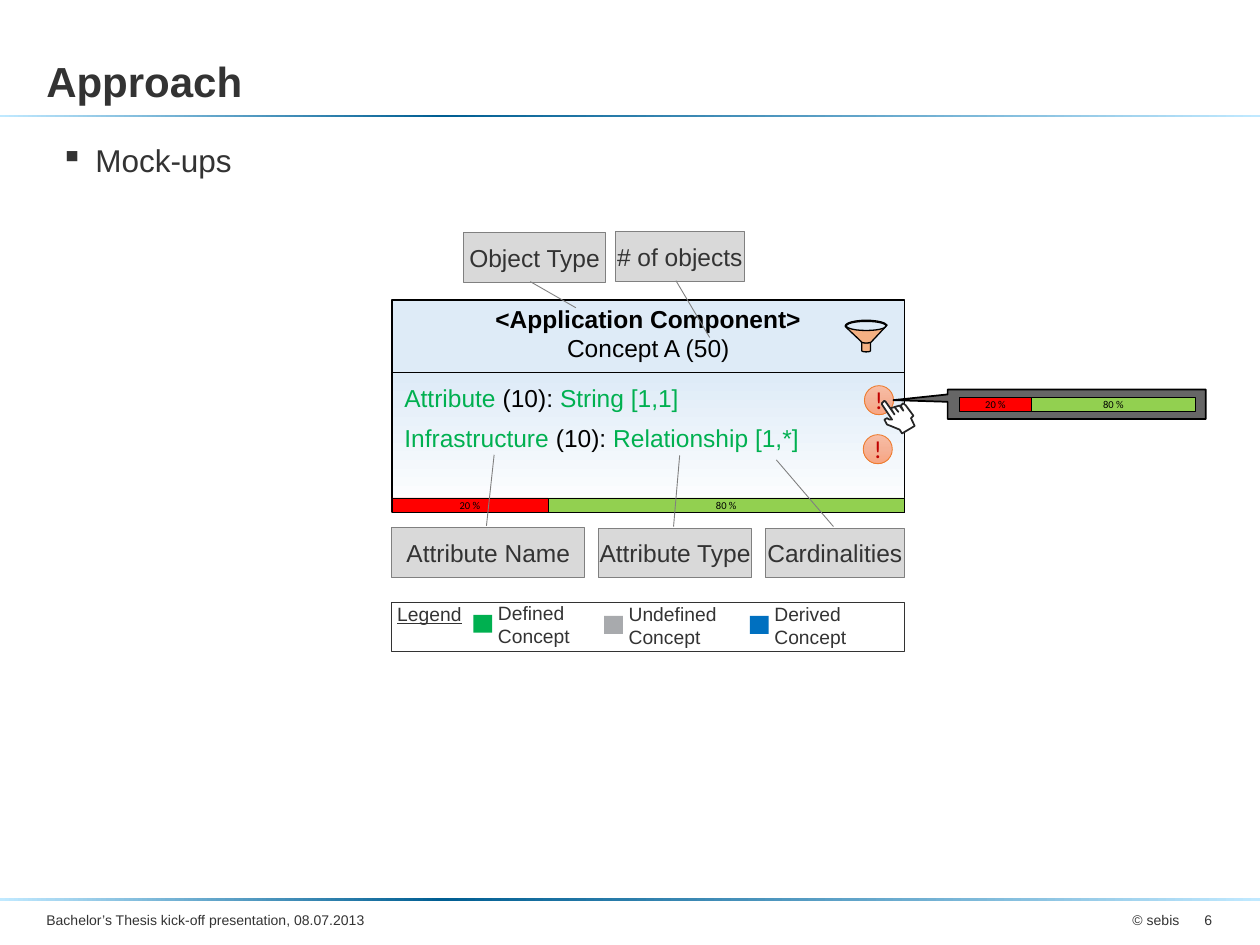
from dataclasses import dataclass

import pptx
import pptx.dml.color
import pptx.enum.shapes
import pptx.enum.text
import pptx.oxml.ns
import pptx.util
from lxml import etree

Pt = pptx.util.Pt
qn = pptx.oxml.ns.qn
RGBColor = pptx.dml.color.RGBColor
SHAPE = pptx.enum.shapes.MSO_SHAPE
ALIGN = pptx.enum.text.PP_ALIGN
ANCHOR = pptx.enum.text.MSO_ANCHOR


@dataclass(frozen=True)
class Theme:
    font: str = "Arial"
    small_font: str = "Calibri"
    title: int = 24
    body: int = 18
    label: int = 14
    legend: int = 11
    footer: int = 8
    percent: int = 6
    text: str = "333333"
    black: str = "000000"
    white: str = "FFFFFF"
    defined: str = "00B050"
    undefined: str = "A8AAAD"
    derived: str = "0070C0"
    label_fill: str = "D9D9D9"
    label_line: str = "808080"
    bad: str = "FF0000"
    good: str = "92D050"
    warning: str = "C00000"
    warning_line: str = "ED7D31"
    funnel: str = "F4B183"
    hand_line: str = "262626"
    rule: tuple = ((0, "C0E9FF"), (35, "005E92"), (100, "C0E9FF"))
    card: tuple = ((0, "DEEBF7"), (35, "DEEBF7"), (100, "FFFFFF"))
    warning_fill: tuple = ((0, "F7BDA5"), (50, "F5B196"), (100, "F8A582"))


THEME = Theme()
CARD_LEFT, CARD_TOP, CARD_WIDTH, CARD_HEIGHT = 224, 171.4, 293, 121
BAR_HEIGHT = 8
RED_SHARE = 0.304
HAND = [
    (509.8, 239.8), (504, 231.1), (504, 230.4), (505.4, 229), (506.2, 229.7),
    (511.2, 236.9), (509, 233.3), (511.2, 232.6), (513.4, 235.4), (511.2, 232.6),
    (514.1, 231.8), (516.2, 234.7), (514.8, 231.8), (516.2, 230.4), (517.7, 231.8),
    (522, 237.6), (520.6, 239), (522.7, 243.4), (515.5, 247.7), (514.1, 245.5),
    (509, 243.4), (506.9, 242.6), (505.4, 239.8), (506.9, 239), (508.3, 239.8),
]


def points(*lengths):
    return [Pt(length) for length in lengths]


def paint_gradient(shape, stops, angle):
    """Fill with any number of (percent, colour) stops; angle is counter-clockwise."""
    shape.fill.gradient()
    shape.fill.gradient_angle = angle
    stop_list = shape._element.spPr.find(qn("a:gradFill")).find(qn("a:gsLst"))
    for old in list(stop_list):
        stop_list.remove(old)
    for percent, color in stops:
        stop = etree.SubElement(stop_list, qn("a:gs"), pos=str(percent * 1000))
        etree.SubElement(stop, qn("a:srgbClr"), val=color)


def style_shape(shape, fill, line=None, width=0.5, angle=270):
    shape.shadow.inherit = False
    if isinstance(fill, tuple):
        paint_gradient(shape, fill, angle)
    else:
        shape.fill.solid()
        shape.fill.fore_color.rgb = RGBColor.from_string(fill)
    if line:
        shape.line.color.rgb = RGBColor.from_string(line)
        shape.line.width = Pt(width)
    else:
        shape.line.fill.background()
    return shape


def add_shape(page, kind, place, fill, line=None, width=0.5, angle=270):
    shape = page.shapes.add_shape(kind, *points(*place))
    return style_shape(shape, fill, line, width, angle)


def write(shape, paragraphs, size, align=ALIGN.LEFT, anchor=ANCHOR.TOP,
          insets=(7.2, 3.6, 7.2, 3.6), font=THEME.font):
    """Each paragraph is a list of (text, colour, font extras) spans."""
    frame = shape.text_frame
    sides = ("margin_left", "margin_top", "margin_right", "margin_bottom")
    frame_format = dict(zip(sides, points(*insets)), word_wrap=True, vertical_anchor=anchor)
    for name, value in frame_format.items():
        setattr(frame, name, value)
    for index, spans in enumerate(paragraphs):
        para = frame.add_paragraph() if index else frame.paragraphs[0]
        para.alignment = align
        for text, color, extras in spans:
            span = para.add_run()
            span.text = text
            span.font.color.rgb = RGBColor.from_string(color)
            for name, value in {"name": font, "size": Pt(size), **extras}.items():
                setattr(span.font, name, value)


def add_text(page, place, paragraphs, size, **layout):
    box = page.shapes.add_textbox(*points(*place))
    write(box, paragraphs, size, **layout)
    return box


def plain(text, color=THEME.text, **extras):
    return [[(text, color, extras)]]


def add_bullet(box):
    properties = box.text_frame.paragraphs[0]._p.get_or_add_pPr()
    properties.set("marL", str(Pt(28)))
    properties.set("indent", str(Pt(-20)))
    etree.SubElement(properties, qn("a:buChar"), char="▪")


def add_frame(page):
    for top in (65.7, 513.2):
        add_shape(page, SHAPE.RECTANGLE, (0, top, 720, 1.4), THEME.rule, angle=0)
    add_text(page, (19.4, 3.6, 612, 57), plain("Approach", bold=True), THEME.title,
             anchor=ANCHOR.BOTTOM, insets=(7.2, 0, 7.2, 0))
    footers = (
        (19.4, 369, "Bachelor’s Thesis kick-off presentation, 08.07.2013", ALIGN.LEFT),
        (554.4, 126.7, "© sebis", ALIGN.RIGHT),
        (680.4, 19.4, "6", ALIGN.RIGHT),
    )
    for left, width, text, align in footers:
        add_text(page, (left, 514, width, 23), plain(text), THEME.footer,
                 align=align, anchor=ANCHOR.MIDDLE)
    add_bullet(add_text(page, (19.4, 77, 680.4, 425.5), plain("Mock-ups"), THEME.body))


def add_bar(page, left, top, width):
    red = width * RED_SHARE
    parts = ((left + red, width - red, THEME.good, "80 %"), (left, red, THEME.bad, "20 %"))
    for part_left, part_width, color, text in parts:
        part = add_shape(page, SHAPE.RECTANGLE, (part_left, top, part_width, BAR_HEIGHT),
                         color, THEME.black, 0.25)
        write(part, plain(text, THEME.black), THEME.percent, ALIGN.CENTER, ANCHOR.MIDDLE,
              (0, 0, 0, 0), THEME.small_font)


def add_warning(page, left, top):
    badge = add_shape(page, SHAPE.OVAL, (left, top, 16.6, 16.6), THEME.warning_fill,
                      THEME.warning_line)
    write(badge, plain("!", THEME.warning), THEME.label, ALIGN.CENTER, ANCHOR.MIDDLE,
          (0, 0, 0, 0), THEME.small_font)


def add_card(page):
    add_shape(page, SHAPE.RECTANGLE, (CARD_LEFT, CARD_TOP, CARD_WIDTH, CARD_HEIGHT),
              THEME.card, THEME.black, 1)
    divider = page.shapes.add_connector(
        pptx.enum.shapes.MSO_CONNECTOR.STRAIGHT,
        *points(CARD_LEFT, 213, CARD_LEFT + CARD_WIDTH, 213))
    divider.line.color.rgb = RGBColor.from_string(THEME.black)
    divider.line.width = Pt(0.5)
    etree.SubElement(divider._element.spPr, qn("a:effectLst"))
    rows = ((215.3, "Attribute ", "String [1,1]"),
            (238.3, "Infrastructure ", "Relationship [1,*]"))
    for top, name, kind in rows:
        spans = [(name, THEME.defined, {}), ("(10): ", THEME.black, {}),
                 (kind, THEME.defined, {})]
        add_text(page, (CARD_LEFT, top, 260, 24.5), [spans], THEME.label)
    heading = (plain("<Application Component>", THEME.black, bold=True)
               + plain("Concept A (50)", THEME.black))
    add_text(page, (CARD_LEFT, 170, CARD_WIDTH, 41), heading, THEME.label, align=ALIGN.CENTER)
    add_warning(page, 494, 220.4)
    add_warning(page, 493.3, 248.4)
    add_shape(page, SHAPE.CAN, (492.5, 194.6, 5, 6.5), THEME.funnel, THEME.black, 0.75)
    add_shape(page, SHAPE.FUNNEL, (483, 183, 24, 13), THEME.funnel, THEME.black, 0.75)
    add_bar(page, CARD_LEFT, 284.6, CARD_WIDTH)


def add_legend(page):
    legend = add_shape(page, SHAPE.RECTANGLE, (CARD_LEFT, 344.2, CARD_WIDTH, 28),
                       THEME.white, THEME.text)
    write(legend, plain("Legend", underline=True), THEME.legend, insets=(3, 0, 3, 0))
    entries = ((270.5, 343.6, THEME.defined, "Defined Concept"),
               (345.2, 344.2, THEME.undefined, "Undefined Concept"),
               (428.5, 344.2, THEME.derived, "Derived Concept"))
    for left, top, color, text in entries:
        add_shape(page, SHAPE.RECTANGLE, (left, top + 7.8, 10.8, 10.2), color)
        add_text(page, (left + 14, top, 70.5, 26.6), plain(text), THEME.legend,
                 insets=(0, 0, 0, 0))


def add_labels(page):
    labels = (
        ("# of objects", 351.5, 132.5, 74, (0.99, 0.47, 2.14, 0.73)),
        ("Cardinalities", 437.3, 302, 79.6, (-0.04, 0.49, -1.39, 0.08)),
        ("Attribute Type", 342, 302, 87.6, (-0.04, 0.49, -1.48, 0.53)),
        ("Attribute Name", CARD_LEFT, 301.6, 110.2, (-0.04, 0.49, -1.48, 0.53)),
        ("Object Type", 264.8, 133, 81.4, (0.99, 0.47, 1.52, 0.79)),
    )
    for text, left, top, width, pointer in labels:
        label = add_shape(page, SHAPE.LINE_CALLOUT_1, (left, top, width, 28.2),
                          THEME.label_fill, THEME.label_line)
        for index, value in enumerate(pointer):
            label.adjustments[index] = value
        write(label, plain(text), THEME.label, ALIGN.CENTER, ANCHOR.MIDDLE, (0, 3.6, 0, 3.6))


def add_tooltip(page):
    tooltip = add_shape(page, SHAPE.RECTANGULAR_CALLOUT, (541.5, 222.6, 147.5, 16.8),
                        THEME.black, THEME.black, 1)
    tooltip.adjustments[0], tooltip.adjustments[1] = -0.71, -0.14
    color = tooltip._element.spPr.find(qn("a:solidFill")).find(qn("a:srgbClr"))
    etree.SubElement(color, qn("a:alpha"), val="60000")
    add_bar(page, 548.4, 227, 134.6)


def add_hand(page):
    start, *rest = [points(*corner) for corner in HAND]
    outline = page.shapes.build_freeform(*start)
    outline.add_line_segments(rest, close=True)
    style_shape(outline.convert_to_shape(), THEME.white, THEME.hand_line, 1)


def main():
    deck = pptx.Presentation()
    deck.slide_width, deck.slide_height = points(720, 540)
    page = deck.slides.add_slide(deck.slide_layouts[6])
    for add_part in (add_frame, add_card, add_legend, add_labels, add_tooltip, add_hand):
        add_part(page)
    deck.save("out.pptx")


if __name__ == "__main__":
    main()
